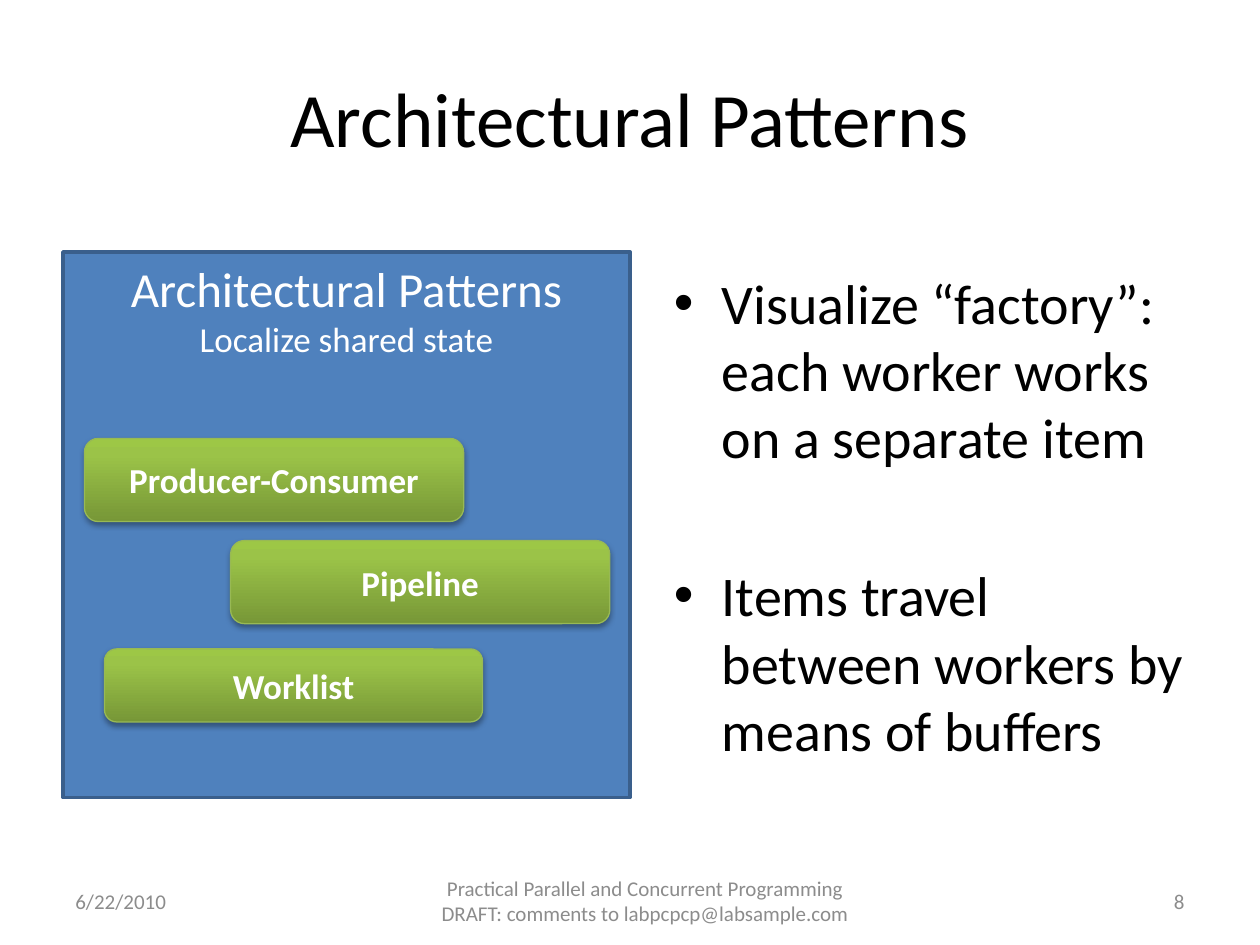
from pptx import Presentation
from pptx.dml.color import RGBColor
from pptx.enum.shapes import MSO_SHAPE
from pptx.enum.text import MSO_ANCHOR, PP_ALIGN
from pptx.oxml import parse_xml
from pptx.oxml.ns import nsdecls
from pptx.util import Inches, Pt

COLORS = {
    "text": "000000", "white": "FFFFFF", "footer": "8C8C8C",
    "panel": "4F81BD", "panel_line": "3A5F8C", "button_line": "98B955",
    "button_bottom": "779737", "button_middle": "9BC348", "button_top": "9DC746",
}


def format_paragraph(paragraph, size, color, align=PP_ALIGN.LEFT, bold=False):
    paragraph.alignment = align
    for run in paragraph.runs:
        run.font.name = "Calibri"
        run.font.size = Pt(size)
        run.font.bold = bold
        run.font.color.rgb = RGBColor.from_string(COLORS[color])


def add_text(slide, box, text, size, color, align):
    shape = slide.shapes.add_textbox(*map(Inches, box))
    text_frame = shape.text_frame
    text_frame.word_wrap = True
    text_frame.vertical_anchor = MSO_ANCHOR.MIDDLE
    text_frame.text = text
    format_paragraph(text_frame.paragraphs[0], size, color, align)


presentation = Presentation()
presentation.slide_width = Inches(10)
presentation.slide_height = Inches(7.5)
slide = presentation.slides.add_slide(presentation.slide_layouts[6])

# Title
add_text(slide, (0.5, 0.3, 9, 1.25), "Architectural Patterns", 44, "text", PP_ALIGN.CENTER)

# Bulleted list
bullets = [
    "Visualize “factory”: each worker works on a separate item",
    "Items travel between workers by means of buffers",
]
body = slide.shapes.add_textbox(Inches(5.25), Inches(2.08), Inches(4.25), Inches(4.95))
body.text_frame.word_wrap = True
body.text_frame.text = "\n".join(bullets)
for index, paragraph in enumerate(body.text_frame.paragraphs):
    format_paragraph(paragraph, 32, "text")
    paragraph.space_before = Pt(52 * index)
    properties = paragraph._p.get_or_add_pPr()
    properties.set("marL", str(Inches(0.38)))
    properties.set("indent", str(Inches(-0.38)))
    properties.append(parse_xml(f'<a:buFont {nsdecls("a")} typeface="Arial"/>'))
    properties.append(parse_xml(f'<a:buChar {nsdecls("a")} char="•"/>'))

# Blue panel
panel = slide.shapes.add_shape(
    MSO_SHAPE.RECTANGLE, Inches(0.5), Inches(2), Inches(4.5), Inches(4.33))
panel.shadow.inherit = False
panel.fill.solid()
panel.fill.fore_color.rgb = RGBColor.from_string(COLORS["panel"])
panel.line.color.rgb = RGBColor.from_string(COLORS["panel_line"])
panel.line.width = Pt(2)
panel.text_frame.word_wrap = True
panel.text_frame.vertical_anchor = MSO_ANCHOR.TOP
panel.text_frame.text = "Architectural Patterns\nLocalize shared state"
for paragraph, size in zip(panel.text_frame.paragraphs, (28, 20)):
    format_paragraph(paragraph, size, "white", PP_ALIGN.CENTER)

# Green pattern buttons: gradient from bottom to top, soft shadow below
buttons = [
    ("Producer-Consumer", 0.67, 3.48, 3.01, 0.66),
    ("Worklist", 0.83, 5.15, 3, 0.58),
    ("Pipeline", 1.83, 4.29, 3.01, 0.66),
]
gradient_stops = [(0, "button_bottom"), (80, "button_middle"), (100, "button_top")]
stops_xml = "".join(
    f'<a:gs pos="{position * 1000}"><a:srgbClr val="{COLORS[color]}"/></a:gs>'
    for position, color in gradient_stops)
shadow_xml = (
    f'<a:outerShdw {nsdecls("a")} blurRad="{Pt(3.1)}" dist="{Pt(1.8)}" dir="5400000" '
    'rotWithShape="0"><a:srgbClr val="000000"><a:alpha val="35000"/></a:srgbClr>'
    '</a:outerShdw>')
for label, *box in buttons:
    button = slide.shapes.add_shape(MSO_SHAPE.ROUNDED_RECTANGLE, *map(Inches, box))
    button.fill.gradient()
    button.fill.gradient_angle = 90
    stop_list = button._element.spPr.find(".//{*}gsLst")
    stop_list.getparent().replace(
        stop_list, parse_xml(f'<a:gsLst {nsdecls("a")}>{stops_xml}</a:gsLst>'))
    button.line.color.rgb = RGBColor.from_string(COLORS["button_line"])
    button.line.width = Pt(0.75)
    button.shadow.inherit = False
    button._element.spPr.find("{*}effectLst").append(parse_xml(shadow_xml))
    button.text_frame.word_wrap = True
    button.text_frame.vertical_anchor = MSO_ANCHOR.MIDDLE
    button.text_frame.text = label
    format_paragraph(button.text_frame.paragraphs[0], 20, "white", PP_ALIGN.CENTER, bold=True)

# Footer: date, course name, slide number
footers = [
    (0.5, 2.33, "6/22/2010", PP_ALIGN.LEFT),
    (3.33, 3.58, "Practical Parallel and Concurrent Programming "
                 "DRAFT: comments to labpcpcp@labsample.com", PP_ALIGN.CENTER),
    (7.17, 2.33, "8", PP_ALIGN.RIGHT),
]
for left, width, text, align in footers:
    add_text(slide, (left, 6.95, width, 0.4), text, 12, "footer", align)

presentation.save("out.pptx")
